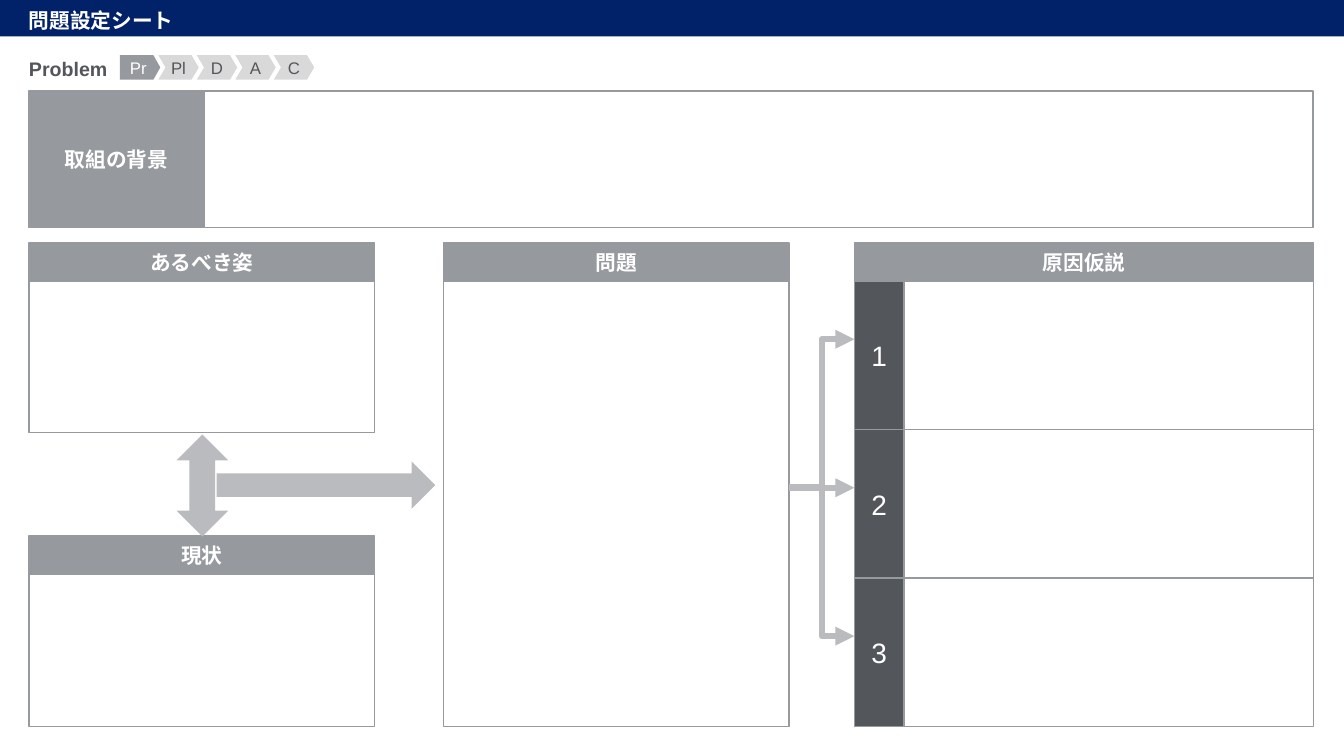
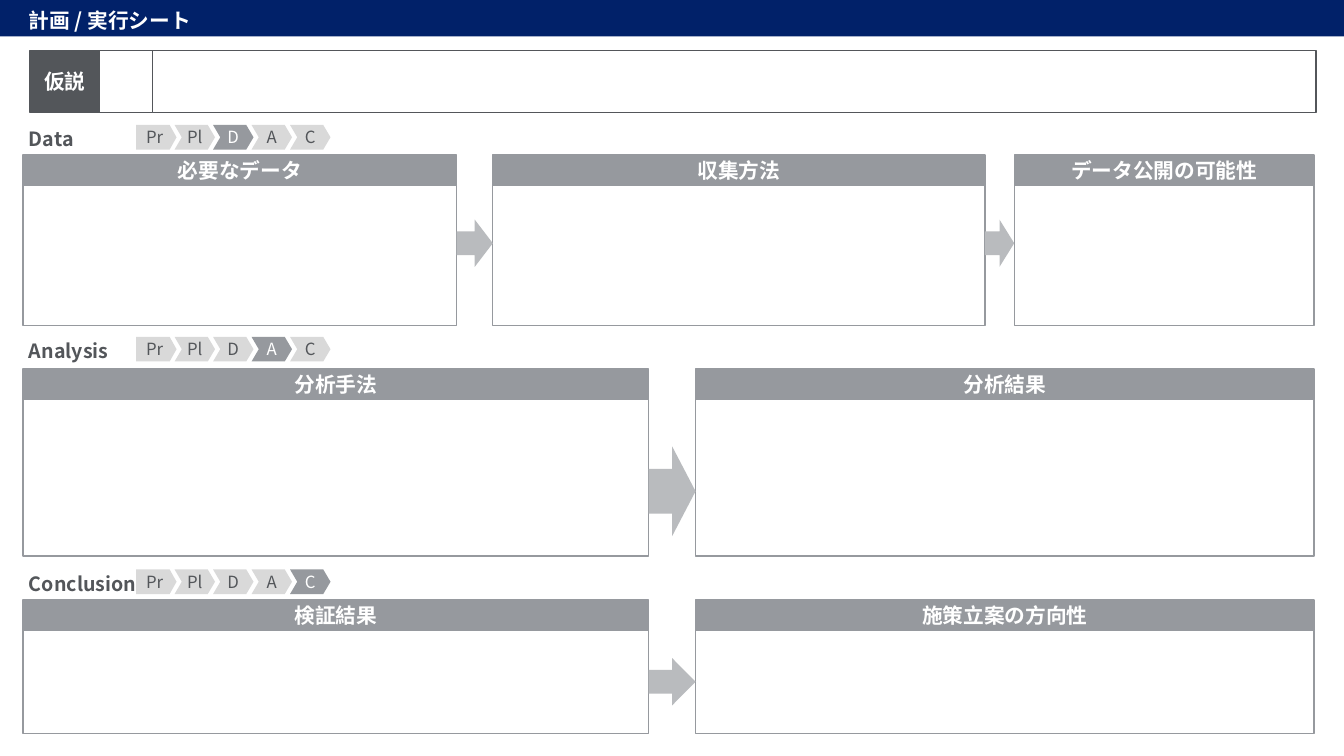
from lxml.etree import SubElement
from pptx import Presentation
from pptx.dml.color import RGBColor
from pptx.enum.shapes import MSO_CONNECTOR as Link, MSO_SHAPE as Preset
from pptx.enum.text import MSO_ANCHOR as Anchor, MSO_AUTO_SIZE as AutoSize, PP_ALIGN as Align
from pptx.oxml.ns import qn
from pptx.util import Cm, Pt

NAVY = RGBColor(0x01, 0x21, 0x69)
DARK = RGBColor(0x53, 0x56, 0x5A)
GRAY = RGBColor(0x96, 0x99, 0x9E)
ARROW = RGBColor(0xB9, 0xBB, 0xBE)
PALE = RGBColor(0xD9, 0xD9, 0xD9)
WHITE = RGBColor(0xFF, 0xFF, 0xFF)
ARIAL, CALIBRI, NOTO = "Arial", "Calibri", "Noto Sans CJK JP"
HEADING = 14.8
PAGE_WIDTH, PAGE_HEIGHT = 33.87, 19.05
MARGIN = 0.73
STEPS = ("Pr", "Pl", "D", "A", "C")


def write(shape, text, size, font, color, bold=False, align=Align.CENTER,
          wrap=True, spacing=None):
    """Fill a shape with one centred-height paragraph."""
    frame = shape.text_frame
    frame.margin_left = frame.margin_right = frame.margin_top = frame.margin_bottom = 0
    frame.auto_size = AutoSize.NONE
    frame.word_wrap = wrap
    frame.vertical_anchor = Anchor.MIDDLE
    para = frame.paragraphs[0]
    para.text = text
    para.alignment = align
    para.space_before = Pt(0)
    if spacing:
        para.line_spacing = spacing
    para.font.size = Pt(size)
    para.font.bold = bold
    para.font.color.rgb = color
    para.font.name = font
    # East Asian glyphs need their own typeface
    props = para._p.pPr.find(qn("a:defRPr"))
    SubElement(props, qn("a:ea")).set("typeface", NOTO)


def add_block(shapes, preset, left, top, width, height, fill, line=None, adjust=()):
    block = shapes.add_shape(preset, Cm(left), Cm(top), Cm(width), Cm(height))
    block.shadow.inherit = False
    block.fill.solid()
    block.fill.fore_color.rgb = fill
    if line is None:
        block.line.fill.background()
    else:
        block.line.color.rgb = line
        block.line.width = Pt(1)
    for index, value in enumerate(adjust):
        block.adjustments[index] = value
    return block


def add_page(deck, title, font):
    """Title-only page with the navy band behind its title."""
    page = deck.slides.add_slide(deck.slide_layouts[5])
    band = add_block(page.shapes, Preset.RECTANGLE, 0, 0, PAGE_WIDTH, 0.92, NAVY)
    page.shapes._spTree.insert(2, band._element)
    box = page.shapes.title
    box.left, box.top, box.width, box.height = Cm(MARGIN), Cm(0.15), Cm(12.17), Cm(0.64)
    write(box, title, HEADING, font, WHITE, True, Align.LEFT, spacing=1.1)
    return page


def add_stage(page, name, active, top, label_width, steps_left, font):
    """Stage name followed by the five steps, one of them highlighted."""
    label = page.shapes.add_textbox(Cm(MARGIN), Cm(top), Cm(label_width), Cm(0.64))
    write(label, name, 14, font, DARK, True, Align.LEFT, spacing=1.1)
    group = page.shapes.add_group_shape()
    for index, step in enumerate(STEPS):
        preset, adjust = (Preset.CHEVRON, 0.295) if index else (Preset.PENTAGON, 0.28)
        fill, color = (GRAY, WHITE) if step == active else (PALE, DARK)
        mark = add_block(group.shapes, preset, steps_left + index * 0.97, top,
                         1.02, 0.62, fill, adjust=[adjust])
        write(mark, step, 12, font, color, wrap=False)


def add_header(page, left, top, width, height, text, font, fill=GRAY):
    header = add_block(page.shapes, Preset.RECTANGLE, left, top, width, height, fill, fill)
    write(header, text, HEADING, font, WHITE, True)


def add_field(page, left, top, width, height, line=GRAY):
    add_block(page.shapes, Preset.RECTANGLE, left, top, width, height, WHITE, line)


def add_card(page, left, top, width, height, text, font, head):
    """Empty field under a header."""
    add_header(page, left, top, width, head, text, font)
    add_field(page, left, top + head, width, height - head)


def add_causes(page, left, top, width, head, row_height, count):
    """Header over numbered rows."""
    number_width = 1.25
    add_header(page, left, top, width, head, "原因仮説", ARIAL)
    for index in range(count):
        row_top = top + head + index * row_height
        add_field(page, left + number_width, row_top, width - number_width, row_height)
        number = add_block(page.shapes, Preset.RECTANGLE, left, row_top,
                           number_width, row_height, DARK, GRAY)
        write(number, str(index + 1), 20, ARIAL, WHITE)


def add_branches(page, left, right, middle, step):
    """Three arrows fanning out from one point."""
    for offset in (-step, 0, step):
        kind = Link.ELBOW if offset else Link.STRAIGHT
        arrow = page.shapes.add_connector(kind, Cm(left), Cm(middle),
                                          Cm(right), Cm(middle + offset))
        arrow.line.color.rgb = ARROW
        arrow.line.width = Pt(4.5)
        SubElement(arrow.line._get_or_add_ln(), qn("a:tailEnd")).set("type", "triangle")
        SubElement(arrow._element.spPr, qn("a:effectLst"))


def add_flow(page, top, height, cards, arrow_middle, arrow_height=1.19):
    """Row of cards (left, width, text) with an arrow in each gap."""
    for left, width, text in cards:
        add_card(page, left, top, width, height, text, NOTO, 0.77)
    for (left, width, _), (next_left, _, _) in zip(cards, cards[1:]):
        end = left + width
        add_block(page.shapes, Preset.RIGHT_ARROW, end, arrow_middle - arrow_height / 2,
                  next_left - end, arrow_height, ARROW)


def build_problem_page(deck):
    page = add_page(deck, "問題設定シート", CALIBRI)
    add_stage(page, "Problem", "Pr", 1.39, 12.17, 3.02, ARIAL)

    # Background
    add_header(page, MARGIN, 2.29, 4.42, 3.45, "取組の背景", NOTO)
    add_field(page, MARGIN + 4.42, 2.29, 27.94, 3.45)

    # Ideal, present state and the problem between them
    top, bottom, width, head = 6.12, 18.31, 8.71, 0.97
    problem_left, causes_left, row_height = 11.18, 21.53, 3.74
    add_card(page, MARGIN, top, width, 4.78, "あるべき姿", ARIAL, head)
    add_card(page, MARGIN, bottom - 4.8, width, 4.8, "現状", ARIAL, head)
    add_card(page, problem_left, top, width, bottom - top, "問題", ARIAL, head)
    add_block(page.shapes, Preset.UP_DOWN_ARROW, 4.45, 10.95, 1.3, 2.57, ARROW,
              adjust=[0.571, 0.5])
    add_block(page.shapes, Preset.RIGHT_ARROW, 5.46, 11.63, 5.51, 1.19, ARROW)

    # Causes
    add_causes(page, causes_left, top, 11.58, head, row_height, 3)
    add_branches(page, problem_left + width, causes_left, 12.29, row_height)


def build_plan_page(deck):
    page = add_page(deck, "計画 / 実行シート", NOTO)

    # Hypothesis
    add_header(page, 0.76, 1.27, 1.75, 1.57, "仮説", NOTO, DARK)
    add_field(page, 2.5, 1.27, 1.34, 1.57, DARK)
    add_field(page, 3.84, 1.27, 29.33, 1.57, DARK)

    # Stages
    for name, active, top in (("Data", "D", 3.15), ("Analysis", "A", 8.49),
                              ("Conclusion", "C", 14.35)):
        add_stage(page, name, active, top, 4.45, 3.43, NOTO)
    add_flow(page, 3.91, 4.3, [(0.58, 10.93, "必要なデータ"), (12.42, 12.4, "収集方法"),
                               (25.56, 7.56, "データ公開の可能性")], 6.13)
    halves = ((0.58, 15.77), (17.53, 15.59))
    for top, height, texts, middle, arrow_height in (
            (9.3, 4.71, ("分析手法", "分析結果"), 12.38, 2.26),
            (15.12, 3.36, ("検証結果", "施策立案の方向性"), 17.18, 1.19)):
        cards = [(*half, text) for half, text in zip(halves, texts)]
        add_flow(page, top, height, cards, middle, arrow_height)


def main():
    deck = Presentation()
    deck.slide_width, deck.slide_height = Cm(PAGE_WIDTH), Cm(PAGE_HEIGHT)
    build_problem_page(deck)
    build_plan_page(deck)
    deck.save("out.pptx")


if __name__ == "__main__":
    main()
